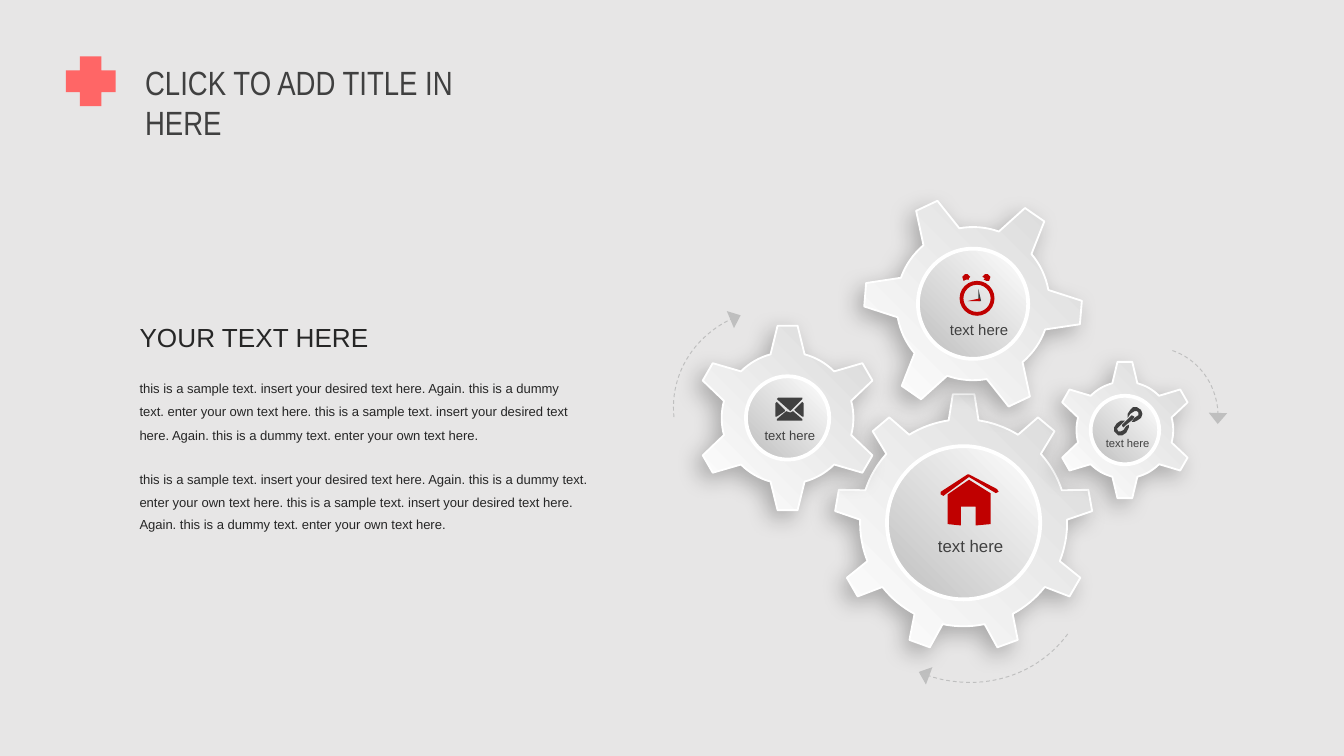
from dataclasses import dataclass
from math import cos, radians, sin

from lxml.etree import SubElement
from pptx import Presentation
from pptx.dml.color import RGBColor
from pptx.enum.dml import MSO_LINE_DASH_STYLE as DASH
from pptx.enum.shapes import MSO_SHAPE as SHAPE
from pptx.enum.text import MSO_ANCHOR, MSO_AUTO_SIZE as AUTO_SIZE, PP_ALIGN
from pptx.oxml.ns import qn
from pptx.util import Inches, Pt

COLORS = {
    "background": "E7E6E6", "coral": "FF6666", "red": "C00000", "white": "FFFFFF",
    "light": "D9D9D9", "silver": "BFBFBF", "dark": "404040", "ink": "262626",
}
SAMPLE = ("this is a sample text. insert your desired text here. Again. "
          "this is a dummy text. enter your own text here. ")


@dataclass
class Gear:
    center: tuple
    teeth: int
    body: float  # radius between the teeth
    tip: float  # radius at the end of a tooth
    hub: float  # diameter of the inner circle
    label: tuple  # left, top, width, height
    size: int
    root_half: float = 15  # half angles of a tooth, in degrees
    tip_half: float = 6.2
    turn: float = 0


BIG = Gear((7.17, 3.89), 9, 0.77, 0.96, 1.14, (6.88, 3.94, 0.69, 0.25), 9, 8.3, 4.8)
LEFT = Gear((5.86, 3.11), 6, 0.49, 0.69, 0.62, (5.59, 3.13, 0.59, 0.22), 7)
TOP = Gear((7.24, 2.26), 6, 0.57, 0.81, 0.82, (6.97, 2.34, 0.64, 0.24), 8, turn=34.7)
RIGHT = Gear((8.37, 3.2), 6, 0.36, 0.51, 0.51, (8.13, 3.2, 0.53, 0.2), 6)

# Each icon is a list of (colour, outline points).
HOUSE = [
    ("red", [(7.05, 3.68), (7.05, 3.9), (7.15, 3.91), (7.15, 3.77), (7.26, 3.77),
             (7.26, 3.91), (7.37, 3.9), (7.37, 3.67), (7.21, 3.57)]),
    ("red", [(7.42, 3.64), (7.21, 3.53), (7.2, 3.53), (7, 3.66), (7, 3.68),
             (7.02, 3.69), (7.21, 3.55), (7.41, 3.67), (7.43, 3.66)]),
]
ENVELOPE = [
    ("dark", [(5.78, 2.97), (5.87, 3.05), (5.88, 3.06), (5.89, 3.05), (5.97, 2.97),
              (5.97, 2.96), (5.79, 2.96)]),
    ("dark", [(5.98, 3.1), (5.98, 3), (5.97, 2.99), (5.91, 3.05), (5.92, 3.06), (5.97, 3.1)]),
    ("dark", [(5.97, 3.12), (5.9, 3.06), (5.88, 3.07), (5.85, 3.06), (5.78, 3.12),
              (5.78, 3.13), (5.97, 3.13)]),
    ("dark", [(5.77, 3.1), (5.77, 3), (5.78, 2.99), (5.84, 3.05), (5.84, 3.06), (5.78, 3.1)]),
]
CLOCK = [
    ("red", [(7.22, 2.06), (7.2, 2.04), (7.18, 2.04), (7.16, 2.06), (7.17, 2.09),
             (7.19, 2.08), (7.21, 2.08), (7.21, 2.07)]),
    ("red", [(7.36, 2.09), (7.37, 2.06), (7.35, 2.04), (7.33, 2.04), (7.31, 2.06),
             (7.33, 2.07), (7.32, 2.08), (7.34, 2.09)]),
    ("dark", [(7.3, 2.24), (7.28, 2.24), (7.28, 2.15)]),
    ("red", [(7.29, 2.22), (7.29, 2.24), (7.2, 2.24)]),
]
CHAIN = [
    ("dark", [(8.42, 3.14), (8.44, 3.11), (8.47, 3.09), (8.47, 3.07), (8.46, 3.06),
              (8.44, 3.06), (8.41, 3.08), (8.39, 3.11), (8.39, 3.08), (8.41, 3.05),
              (8.43, 3.03), (8.46, 3.03), (8.49, 3.05), (8.5, 3.08), (8.49, 3.11),
              (8.46, 3.13), (8.44, 3.14)]),
    ("dark", [(8.42, 3.09), (8.44, 3.1), (8.43, 3.12), (8.38, 3.16), (8.36, 3.18),
              (8.35, 3.17), (8.35, 3.16), (8.41, 3.1)]),
    ("dark", [(8.37, 3.13), (8.34, 3.16), (8.31, 3.19), (8.32, 3.21), (8.34, 3.21),
              (8.36, 3.2), (8.38, 3.17), (8.4, 3.16), (8.4, 3.18), (8.38, 3.22),
              (8.35, 3.24), (8.32, 3.24), (8.29, 3.21), (8.29, 3.18), (8.31, 3.15),
              (8.34, 3.13)]),
]


def rgb(name):
    return RGBColor.from_string(COLORS[name])


def inches(*lengths):
    return [Inches(length) for length in lengths]


def style_text(box, text, size, color, font="Arial", wrap=False, spacing=None):
    frame = box.text_frame
    frame.text = text
    frame.word_wrap = wrap
    frame.auto_size = AUTO_SIZE.NONE
    frame.vertical_anchor = MSO_ANCHOR.TOP
    para = frame.paragraphs[0]
    para.alignment = PP_ALIGN.LEFT
    para.line_spacing = spacing
    para.font.size = Pt(size)
    para.font.name = font
    para.font.color.rgb = rgb(color)


def add_text(shapes, place, *args, **options):
    style_text(shapes.add_textbox(*inches(*place)), *args, **options)


def paint(shape, color):
    shape.shadow.inherit = False
    shape.fill.solid()
    shape.fill.fore_color.rgb = rgb(color)
    shape.line.fill.background()


def paint_gradient(shape, end_color, angle, line_width):
    """Fade from white to end_color, with a white outline."""
    shape.shadow.inherit = False
    shape.fill.gradient()
    shape.fill.gradient_angle = angle
    for stop, color in zip(shape.fill.gradient_stops, ("white", end_color)):
        stop.color.rgb = rgb(color)
    shape.line.color.rgb = rgb("white")
    shape.line.width = Pt(line_width)


def cast_shadow(shape):
    effects = shape._element.spPr.find(qn("a:effectLst"))
    shadow = SubElement(effects, qn("a:outerShdw"), blurRad=str(Pt(12)), dist=str(Pt(5)),
                        dir=str(135 * 60000), algn="tr", rotWithShape="0")
    black = SubElement(shadow, qn("a:srgbClr"), val="000000")
    SubElement(black, qn("a:alpha"), val="26000")


def add_polygon(shapes, points):
    start, *rest = [inches(*point) for point in points]
    builder = shapes.build_freeform(*start)
    builder.add_line_segments(rest, close=True)
    return builder.convert_to_shape()


def gear_outline(gear):
    step = 360 / gear.teeth
    valley = step - 2 * gear.root_half
    points = []
    for tooth in range(gear.teeth):
        angle = gear.turn + tooth * step
        polar = [(gear.tip, angle - gear.tip_half), (gear.tip, angle + gear.tip_half)]
        polar += [(gear.body, angle + gear.root_half + valley * part / 8) for part in range(9)]
        points += [(gear.center[0] + radius * sin(radians(turn)),
                    gear.center[1] - radius * cos(radians(turn))) for radius, turn in polar]
    return points


def add_gear(page, gear, icon):
    shapes = page.shapes.add_group_shape().shapes
    wheel = add_polygon(shapes, gear_outline(gear))
    paint_gradient(wheel, "light", 45, 1)
    cast_shadow(wheel)
    left, top = (middle - gear.hub / 2 for middle in gear.center)
    hub = shapes.add_shape(SHAPE.OVAL, *inches(left, top, gear.hub, gear.hub))
    paint_gradient(hub, "silver", 225, 2)
    for color, points in icon:
        paint(add_polygon(shapes, points), color)
    add_text(shapes, gear.label, "text here", gear.size, "dark")
    return shapes


def add_turn_arrow(page, place, rotation):
    arc = page.shapes.add_shape(SHAPE.ARC, *inches(*place))
    arc.adjustments[0], arc.adjustments[1] = 162, 207.144
    arc.rotation = rotation
    arc.shadow.inherit = False
    arc.fill.background()
    arc.line.color.rgb = rgb("silver")
    arc.line.width = Pt(0.5)
    arc.line.dash_style = DASH.DASH
    SubElement(arc.line._get_or_add_ln(), qn("a:tailEnd"), type="triangle", w="lg", len="med")


def add_title(page):
    title = page.shapes.title
    title.left, title.top, title.width, title.height = inches(0.98, 0.41, 2.87, 0.4)
    style_text(title, "CLICK TO ADD TITLE IN HERE", 18, "dark", "Arial Narrow", wrap=True)
    cross = page.shapes.add_shape(SHAPE.CROSS, *inches(0.49, 0.42, 0.37, 0.37))
    cross.adjustments[0] = 0.284
    paint(cross, "coral")


def main():
    deck = Presentation()
    deck.slide_width = Inches(10)
    deck.slide_height = Inches(10 * 9 / 16)
    page = deck.slides.add_slide(deck.slide_layouts[5])
    page.background.fill.solid()
    page.background.fill.fore_color.rgb = rgb("background")

    add_title(page)
    add_turn_arrow(page, (5.05, 2.26, 1.44, 1.52), 263.7)
    add_turn_arrow(page, (6.26, 3.19, 1.82, 1.92), 126.2)
    add_turn_arrow(page, (8.04, 2.58, 1.02, 1.08), 18.7)

    sample = (SAMPLE * 2).strip()
    add_text(page.shapes, (0.94, 2.72, 3.5, 0.63), sample, 7, "ink", wrap=True, spacing=1.5)
    add_text(page.shapes, (0.94, 2.34, 1.93, 0.34), "YOUR TEXT HERE", 14, "ink")
    add_text(page.shapes, (0.94, 3.41, 3.57, 0.61), sample, 7, "ink", wrap=True, spacing=Pt(12))

    add_gear(page, BIG, HOUSE)
    add_gear(page, LEFT, ENVELOPE)
    clock = add_gear(page, TOP, CLOCK)
    dial = clock.add_shape(SHAPE.DONUT, *inches(7.14, 2.09, 0.26, 0.26))
    dial.adjustments[0] = 0.11
    paint(dial, "red")
    add_gear(page, RIGHT, CHAIN)
    deck.save("out.pptx")


if __name__ == "__main__":
    main()
